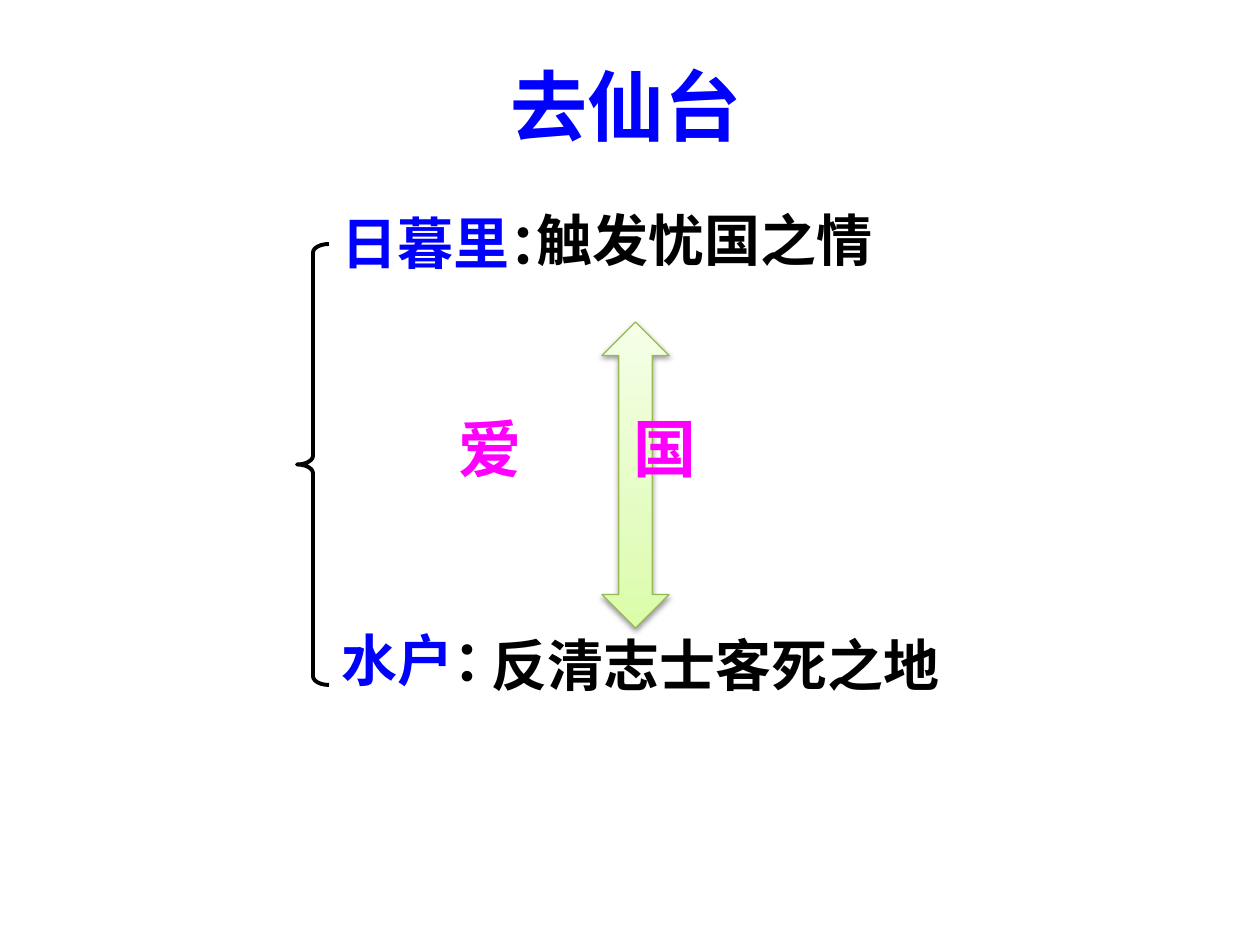
from typing import NamedTuple

from pptx import Presentation
from pptx.dml.color import RGBColor
from pptx.enum.lang import MSO_LANGUAGE_ID
from pptx.enum.shapes import MSO_SHAPE
from pptx.enum.text import MSO_AUTO_SIZE, PP_ALIGN
from pptx.oxml import parse_xml
from pptx.oxml.ns import nsdecls
from pptx.util import Pt

SCALE = 914400 / 126
BRACE = MSO_SHAPE.LEFT_BRACE
ARROW = MSO_SHAPE.UP_DOWN_ARROW
GROW = MSO_AUTO_SIZE.SHAPE_TO_FIT_TEXT
LEFT, CENTER = PP_ALIGN.LEFT, PP_ALIGN.CENTER
CHINESE = MSO_LANGUAGE_ID.SIMPLIFIED_CHINESE
BLUE, BLACK, PINK, GREEN = "0000FF", "000000", "FF00FF", "98B955"
STOPS = [(0, "DAFDA7"), (35, "E4FCC2"), (100, "F5FFE7")]


class Box(NamedTuple):
    x: int
    y: int
    w: int
    h: int


class Label(NamedTuple):
    box: Box
    runs: list[tuple[str, str]]
    size: int = 32
    align: PP_ALIGN = LEFT
    tab: int = 0


PLACES = [
    Label(Box(280, 52, 692, 106), [("去仙台", BLUE)], 44, CENTER),
    Label(Box(329, 202, 252, 81), [("日暮里", BLUE), ("：", BLACK)]),
    Label(Box(329, 619, 196, 81), [("水户", BLUE), ("：", BLACK)]),
]
NOTES = [
    Label(Box(446, 403, 455, 89), [("爱\t国", PINK)], 36, tab=175),
    Label(Box(524, 199, 401, 81), [("触发忧国之情", BLACK)]),
    Label(Box(479, 624, 493, 81), [("反清志士客死之地", BLACK)]),
]


def emu(px: int) -> int:
    return round(px * SCALE)


def span(box: Box) -> list[int]:
    return [emu(px) for px in box]


def color(code: str) -> RGBColor:
    return RGBColor.from_string(code)


def write(slide, label: Label) -> None:
    frame = slide.shapes.add_textbox(*span(label.box)).text_frame
    frame.word_wrap = True
    frame.auto_size = GROW
    para = frame.paragraphs[0]
    para.alignment = label.align
    if label.tab:
        para._p.get_or_add_pPr().append(parse_xml(
            f'<a:tabLst {nsdecls("a")}>'
            f'<a:tab pos="{emu(label.tab)}" algn="l"/></a:tabLst>'))
    style = {"name": "Arial", "size": Pt(label.size), "bold": True,
             "language_id": CHINESE}
    for text, code in label.runs:
        run = para.add_run()
        run.text = text
        for key, value in style.items():
            setattr(run.font, key, value)
        run.font.color.rgb = color(code)


def draw(slide, kind: MSO_SHAPE, box: Box, code: str, width: float):
    shape = slide.shapes.add_shape(kind, *span(box))
    shape.shadow.inherit = False
    shape.fill.background()
    shape.line.color.rgb = color(code)
    shape.line.width = Pt(width)
    return shape


def shade(shape) -> None:
    fill = shape.fill
    fill.gradient()
    fill.gradient_angle = 90
    props = shape._element.spPr
    stops = props.find(".//{*}gsLst")
    stops.clear()
    for place, code in STOPS:
        stops.append(parse_xml(
            f'<a:gs {nsdecls("a")} pos="{place * 1000}">'
            f'<a:srgbClr val="{code}"/></a:gs>'))
    props.find("{*}effectLst").append(parse_xml(
        f'<a:outerShdw {nsdecls("a")} blurRad="{Pt(3.1)}" dist="{Pt(1.6)}" '
        'dir="5400000" rotWithShape="0"><a:srgbClr val="000000">'
        '<a:alpha val="38000"/></a:srgbClr></a:outerShdw>'))


def main() -> None:
    deck = Presentation()
    deck.slide_width, deck.slide_height = emu(1260), emu(945)
    slide = deck.slides.add_slide(deck.slide_layouts[6])
    for label in PLACES:
        write(slide, label)
    brace = draw(slide, BRACE, Box(297, 244, 32, 441), BLACK, 2.25)
    brace.adjustments[0] = 0.27
    shade(draw(slide, ARROW, Box(602, 322, 67, 306), GREEN, 0.75))
    for label in NOTES:
        write(slide, label)
    deck.save("out.pptx")


if __name__ == "__main__":
    main()
